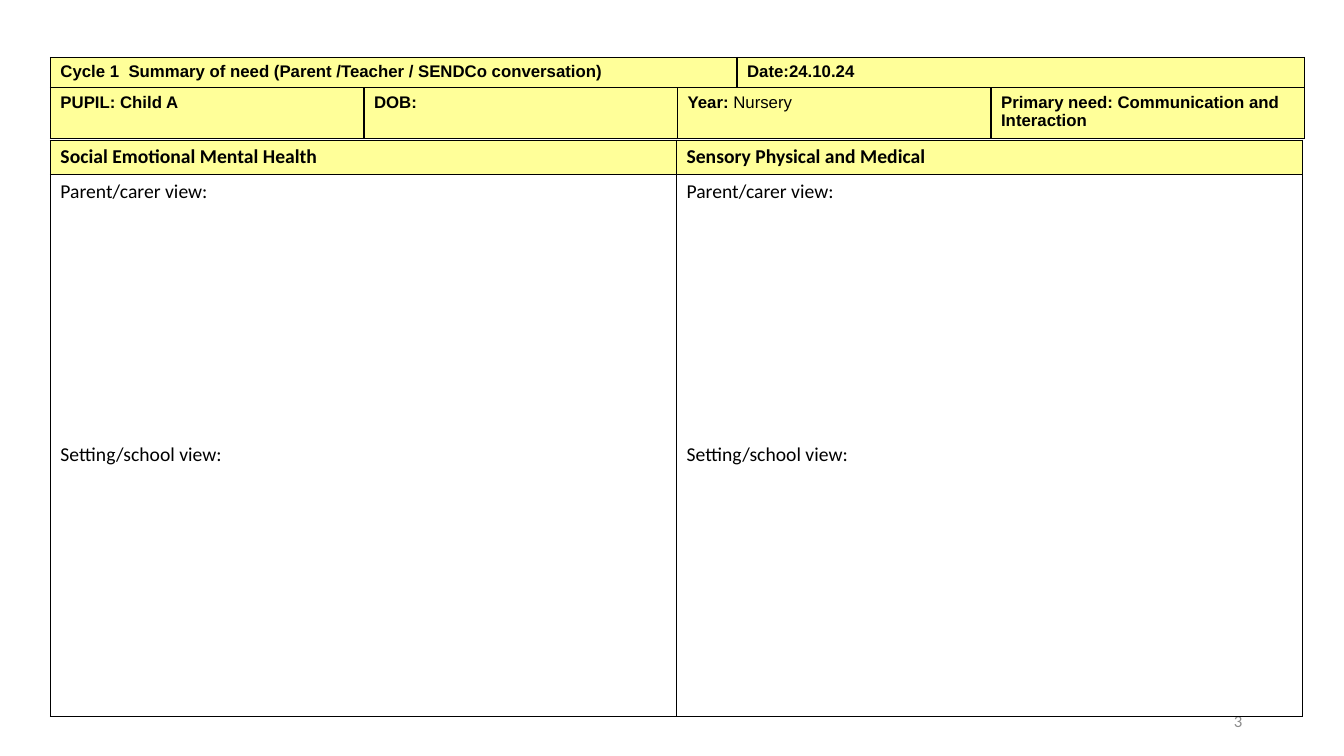
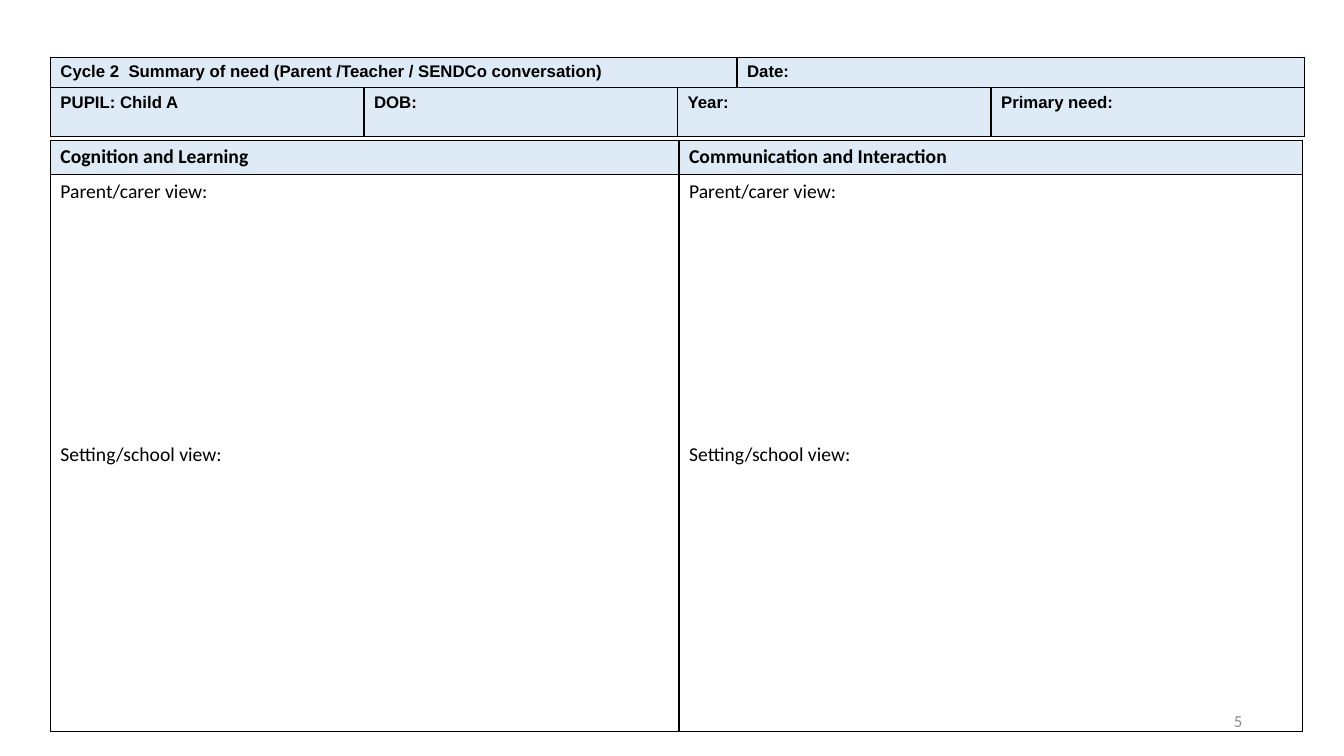
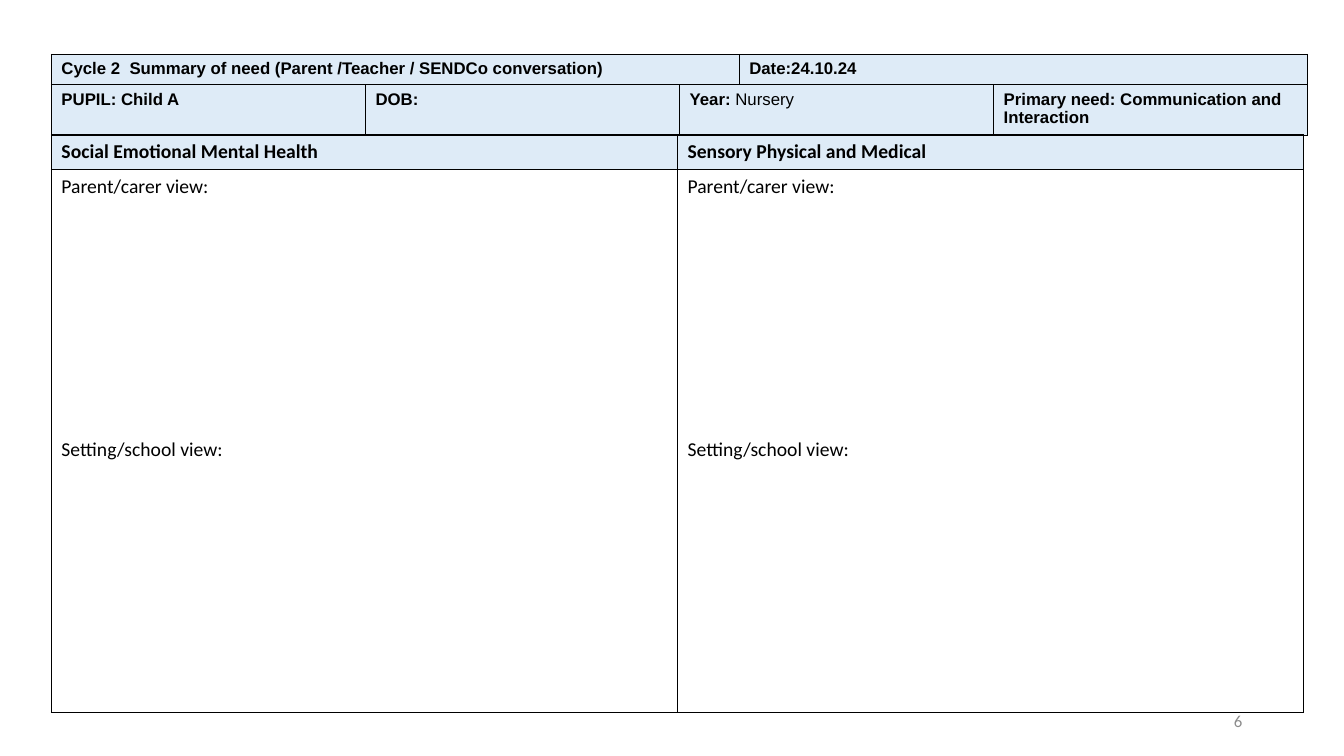
"""Build three summary-of-need forms, each with a details table and a views table."""
from dataclasses import dataclass

from lxml import etree
from pptx import Presentation
from pptx import util as u
from pptx.dml.color import RGBColor
from pptx.enum import text as t
from pptx.oxml import ns


@dataclass(frozen=True)
class Theme:
    black: str = "000000"
    grey: str = "8C8C8C"
    yellow: str = "FFFF99"
    blue: str = "DEEBF7"
    details_font: str = "Arial"
    views_font: str = "Calibri"
    small: float = 12
    medium: float = 14
    border: float = 1
    view_gap: float = 171


@dataclass(frozen=True)
class Label:
    text: str
    value: str = ""


@dataclass(frozen=True)
class Form:
    number: int
    cycle: int
    colour: str
    areas: tuple[str, str]
    date: str = "24.10.24"
    year: Label = Label("Year: ", "Nursery")
    need: str = " Communication and Interaction"
    left: float = 0.5
    top: float = 0.57
    details_width: float = 12.44
    views_top: float = 1.39
    views_shares: tuple[float, float] = (0.5, 0.5)
    views_height: float = 5.38


THEME = Theme()
SLIDE_WIDTH, SLIDE_HEIGHT = 13.33, 7.5
VIEWS_WIDTH = 12.42
DETAILS_SHARES = (0.25, 0.25, 0.0475, 0.2025, 0.25)
DETAILS_ROWS = (0.29, 0.48)
AREA_ROW = 0.34
VIEWS = ("Parent/carer view:", "Setting/school view:")

FORMS = (
    Form(3, 1, THEME.yellow, ("Social Emotional Mental Health", "Sensory Physical and Medical")),
    Form(5, 2, THEME.blue, ("Cognition and Learning", "Communication and Interaction"),
         date="", year=Label("Year:"), need="", views_shares=(0.502, 0.498), views_height=5.53),
    Form(6, 2, THEME.blue, ("Social Emotional Mental Health", "Sensory Physical and Medical"),
         left=0.51, top=0.54, details_width=12.46, views_top=1.34, views_height=5.39),
)


def write(paragraph, text: str, *, font: str, size: float,
          colour: str = THEME.black, bold: bool = False) -> None:
    """Add a formatted run to a paragraph."""
    run = paragraph.add_run()
    run.text = text
    run.font.name = font
    run.font.size = u.Pt(size)
    run.font.bold = bold
    run.font.color.rgb = RGBColor.from_string(colour)


def outline(cell) -> None:
    """Draw a solid line on all four sides of a cell."""
    properties = cell._tc.get_or_add_tcPr()
    for position, side in enumerate(("lnL", "lnR", "lnT", "lnB")):
        line = etree.Element(ns.qn(f"a:{side}"), w=str(u.Pt(THEME.border)))
        fill = etree.SubElement(line, ns.qn("a:solidFill"))
        etree.SubElement(fill, ns.qn("a:srgbClr"), val=THEME.black)
        properties.insert(position, line)


def add_grid(slide, left: float, top: float, width: float,
             shares: tuple[float, ...], heights: tuple[float, ...]):
    """Add an outlined, unfilled table with columns given as shares of its width."""
    table = slide.shapes.add_table(
        len(heights), len(shares), u.Inches(left), u.Inches(top),
        u.Inches(width), u.Inches(sum(heights))).table
    table.first_row = table.horz_banding = False
    for column, share in zip(table.columns, shares):
        column.width = u.Inches(width * share)
    for row, height in zip(table.rows, heights):
        row.height = u.Inches(height)
    for cell in table.iter_cells():
        cell.fill.background()
        outline(cell)
    return table


def fill_heading(cell, label: Label, *, colour: str, font: str, size: float) -> None:
    """Colour a cell and write its bold label and plain value."""
    cell.fill.solid()
    cell.fill.fore_color.rgb = RGBColor.from_string(colour)
    paragraph = cell.text_frame.paragraphs[0]
    write(paragraph, label.text, font=font, size=size, bold=True)
    if label.value:
        write(paragraph, label.value, font=font, size=size)


def add_details(slide, form: Form) -> None:
    """Add the table with the cycle, the date and the pupil's details."""
    table = add_grid(slide, form.left, form.top, form.details_width, DETAILS_SHARES, DETAILS_ROWS)
    for row, first, last in ((0, 0, 2), (0, 3, 4), (1, 2, 3)):
        table.cell(row, first).merge(table.cell(row, last))
    title = f"Cycle {form.cycle}  Summary of need (Parent /Teacher / SENDCo conversation)"
    labels = {
        (0, 0): Label(title),
        (0, 3): Label(f"Date:{form.date}"),
        (1, 0): Label("PUPIL: Child A"),
        (1, 1): Label("DOB:"),
        (1, 2): form.year,
        (1, 4): Label(f"Primary need:{form.need}"),
    }
    for (row, column), label in labels.items():
        fill_heading(table.cell(row, column), label, colour=form.colour,
                     font=THEME.details_font, size=THEME.small)


def add_views(slide, form: Form) -> None:
    """Add the table with two areas of need and the views on each."""
    table = add_grid(slide, form.left, form.views_top, VIEWS_WIDTH,
                     form.views_shares, (AREA_ROW, form.views_height))
    for column, area in enumerate(form.areas):
        fill_heading(table.cell(0, column), Label(area), colour=form.colour,
                     font=THEME.views_font, size=THEME.medium)
        frame = table.cell(1, column).text_frame
        parent, setting = frame.paragraphs[0], frame.add_paragraph()
        setting.space_before = u.Pt(THEME.view_gap)
        for paragraph, view in zip((parent, setting), VIEWS):
            write(paragraph, view, font=THEME.views_font, size=THEME.medium)


def add_page_number(slide, number: int) -> None:
    """Add the grey page number at the lower right."""
    box = slide.shapes.add_textbox(u.Inches(9.42), u.Inches(6.95), u.Inches(3), u.Inches(0.4))
    frame = box.text_frame
    frame.word_wrap = True
    frame.vertical_anchor = t.MSO_ANCHOR.MIDDLE
    paragraph = frame.paragraphs[0]
    paragraph.alignment = t.PP_ALIGN.RIGHT
    write(paragraph, str(number), font=THEME.views_font, size=THEME.small, colour=THEME.grey)


def main() -> None:
    """Build and save the presentation."""
    presentation = Presentation()
    presentation.slide_width = u.Inches(SLIDE_WIDTH)
    presentation.slide_height = u.Inches(SLIDE_HEIGHT)
    blank = presentation.slide_layouts[6]
    for form in FORMS:
        slide = presentation.slides.add_slide(blank)
        add_page_number(slide, form.number)
        add_details(slide, form)
        add_views(slide, form)
    presentation.save("out.pptx")


if __name__ == "__main__":
    main()
